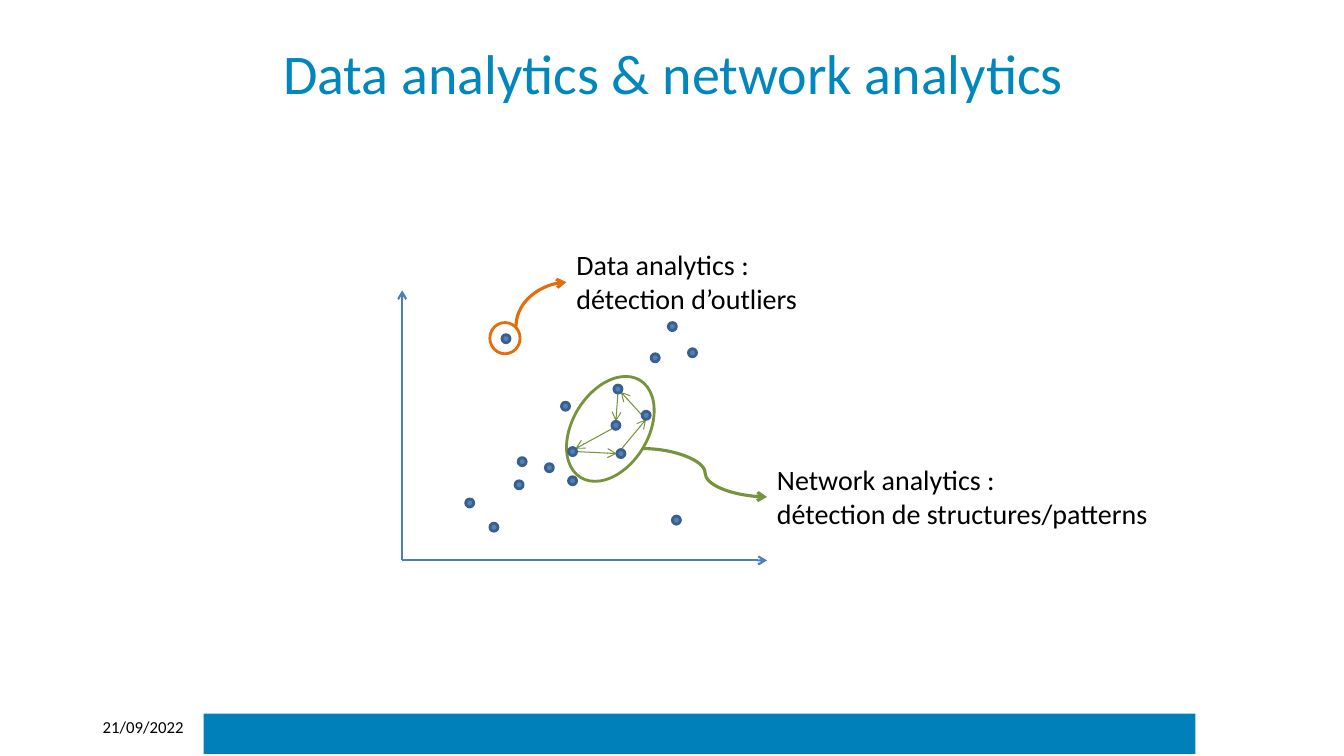
import pptx
import pptx.util
import pptx.dml.color
import pptx.enum.shapes
import pptx.enum.text
import pptx.oxml.ns
import lxml.etree

RGBColor = pptx.dml.color.RGBColor
TITLE_BLUE = RGBColor(0x00, 0x87, 0xBE)
BAR_BLUE = RGBColor(0x00, 0x80, 0xBB)
AXIS_BLUE = RGBColor(0x4B, 0x7E, 0xBC)
DOT_FILL = RGBColor(0x4F, 0x81, 0xBD)
DOT_LINE = RGBColor(0x3A, 0x5F, 0x8C)
ORANGE = RGBColor(0xE4, 0x6C, 0x0A)
GREEN = RGBColor(0x77, 0x93, 0x3C)
BLACK = RGBColor(0, 0, 0)

COLUMNS, ROWS = 133.33, 75
CELL = pptx.util.Inches(0.1)
FONT = "Calibri"

TITLE = [["Data analytics & network analytics"]]
DATE = [["21/09/2022"]]
OUTLIER_LABEL = [["Data analytics :", "détection d’outliers"]]
NETWORK_LABEL = [["Network analytics :"], ["détection de structures/patterns"]]

BAR = (20.2, 70.8, 98.4, 4)
ORIGIN = (39.9, 55.6)
AXIS_ENDS = [(39.9, 28.8), (76.1, 55.6)]
RADIUS = 0.4
DIAGONAL = 0.7
OUTLIER = (50.2, 33.6)
SCATTER = [
    (46.6, 49.9), (51.8, 45.8), (49, 52.3), (51.5, 48.1), (56.8, 47.7),
    (54.5, 46.4), (56.1, 40.3), (66.7, 32.4), (67.1, 51.6), OUTLIER,
    (65, 35.5), (68.7, 35),
]
NETWORK = {
    "top": (61.3, 38.6), "right": (64.1, 41.2), "middle": (61.1, 42.2),
    "left": (56.8, 44.8), "bottom": (61.6, 45),
}
NETWORK_LINKS = [
    ("right", (-1, 0), "top", (DIAGONAL, DIAGONAL)),
    ("left", (1, 0), "bottom", (-1, 0)),
    ("bottom", (0, -1), "right", (0, 1)),
    ("top", (0, 1), "middle", (0, -1)),
    ("middle", (-DIAGONAL, DIAGONAL), "left", (DIAGONAL, -DIAGONAL)),
]

presentation = pptx.Presentation()
presentation.slide_width = int(COLUMNS * CELL)
presentation.slide_height = int(ROWS * CELL)
slide = presentation.slides.add_slide(presentation.slide_layouts[6])


def cells(*lengths):
    return [round(length * CELL) for length in lengths]


def add_shape(kind, box, fill=None, line=None, rotation=0):
    shape = slide.shapes.add_shape(kind, *cells(*box))
    shape.shadow.inherit = False
    shape.rotation = rotation
    if fill is None:
        shape.fill.background()
    else:
        shape.fill.solid()
        shape.fill.fore_color.rgb = fill
    if line is None:
        shape.line.fill.background()
    else:
        shape.line.color.rgb = line
        shape.line.width = pptx.util.Pt(2)
    return shape


def add_ellipse(center, width, height, fill=None, line=None, rotation=0):
    box = (center[0] - width / 2, center[1] - height / 2, width, height)
    add_shape(pptx.enum.shapes.MSO_SHAPE.OVAL, box, fill, line, rotation)


def add_dot(center):
    add_ellipse(center, 2 * RADIUS, 2 * RADIUS, DOT_FILL, DOT_LINE)


def add_arrow(start, end, color, width, curved=False, arrow_end="tailEnd"):
    types = pptx.enum.shapes.MSO_CONNECTOR
    kind = types.CURVE if curved else types.STRAIGHT
    connector = slide.shapes.add_connector(kind, *cells(*start, *end))
    connector.line.color.rgb = color
    connector.line.width = pptx.util.Pt(width)
    qualified = pptx.oxml.ns.qn
    line = connector.line._get_or_add_ln()
    lxml.etree.SubElement(line, qualified("a:" + arrow_end), type="arrow")
    properties = connector._element.spPr
    lxml.etree.SubElement(properties, qualified("a:effectLst"))
    return connector


def add_text(box, paragraphs, size, color=BLACK, centered=False, wrap=True):
    text_frame = slide.shapes.add_textbox(*cells(*box)).text_frame
    text_frame.word_wrap = wrap
    if centered:
        text_frame.vertical_anchor = pptx.enum.text.MSO_ANCHOR.MIDDLE
    for index, lines in enumerate(paragraphs):
        paragraph = text_frame.add_paragraph() if index else text_frame.paragraphs[0]
        if centered:
            paragraph.alignment = pptx.enum.text.PP_ALIGN.CENTER
        for number, line in enumerate(lines):
            if number:
                paragraph.add_line_break()
            run = paragraph.add_run()
            run.text = line
            run.font.name = FONT
            run.font.size = pptx.util.Pt(size)
            run.font.color.rgb = color


def site(name, direction):
    return [c + RADIUS * d for c, d in zip(NETWORK[name], direction)]


add_shape(pptx.enum.shapes.MSO_SHAPE.RECTANGLE, BAR, BAR_BLUE)
add_text((6.8, 2.1, 120, 10.1), TITLE, 40, TITLE_BLUE, centered=True)

for axis_end in AXIS_ENDS:
    add_arrow(ORIGIN, axis_end, AXIS_BLUE, 1.5)
for center in SCATTER:
    add_dot(center)

add_ellipse((50.1, 33.55), 3, 3.1, line=ORANGE)
add_text((56.2, 24.1, 24.8, 7.7), OUTLIER_LABEL, 20, wrap=False)
outlier_arrow = add_arrow((56.2, 28), (51.2, 32.4), ORANGE, 2.25, True, "headEnd")
geometry = outlier_arrow._element.spPr.find(pptx.oxml.ns.qn("a:prstGeom"))
geometry.set("prst", "curvedConnector2")

for source, source_side, target, target_side in NETWORK_LINKS:
    add_arrow(site(source, source_side), site(target, target_side), GREEN, 0.75)
add_ellipse((60.55, 42.55), 7.5, 11.3, line=GREEN, rotation=31.4)
add_text((76.1, 45.4, 39.3, 7.7), NETWORK_LABEL, 20, wrap=False)
add_arrow((63.8, 44.5), (76.1, 49.3), GREEN, 2.25, True)
for center in NETWORK.values():
    add_dot(center)

add_text((9.2, 70.6, 12.6, 4), DATE, 12)

presentation.save("out.pptx")
